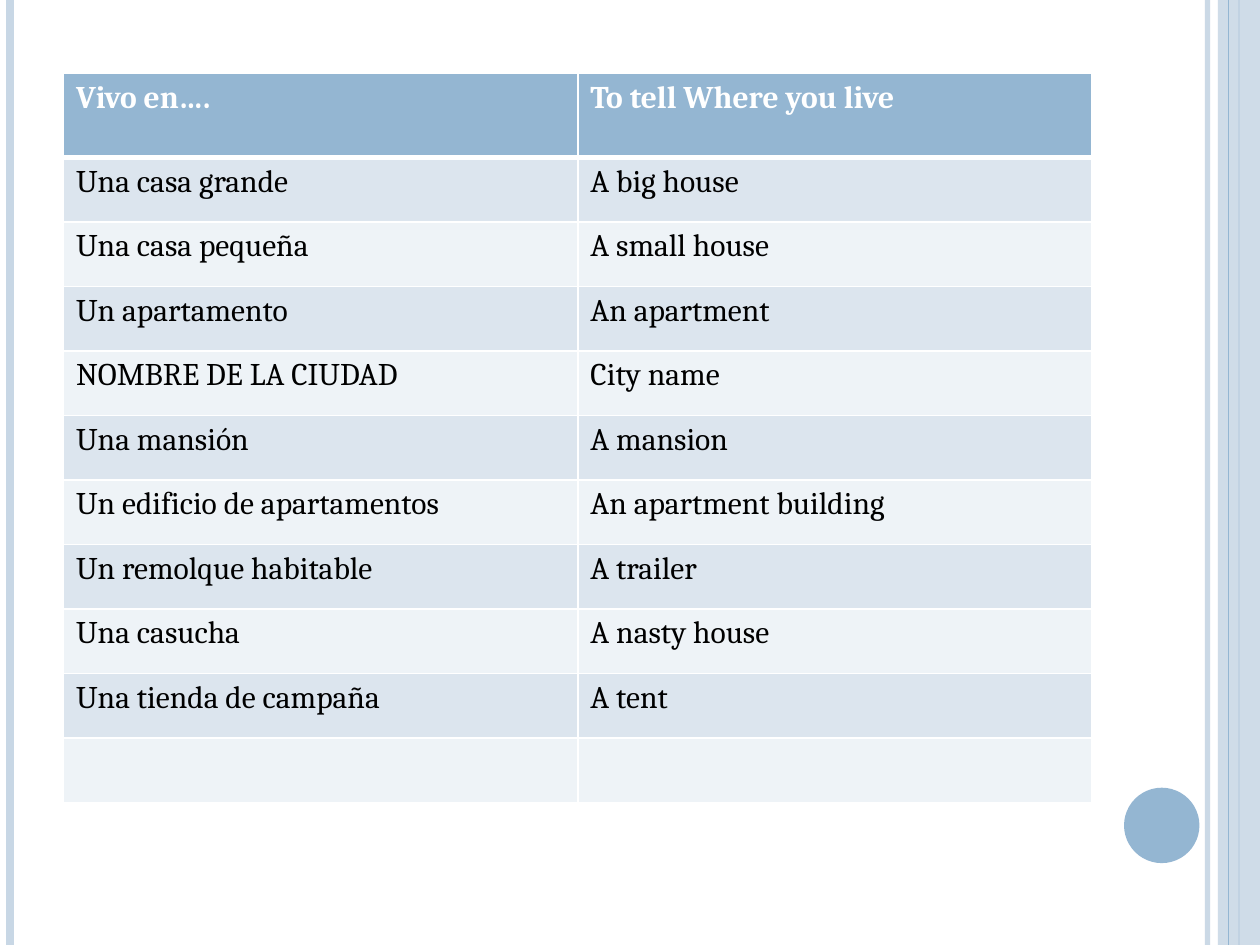
from lxml import etree
from pptx import Presentation
from pptx import util as u
from pptx.dml.color import RGBColor
from pptx.enum import shapes
from pptx.oxml import ns

COLOURS = {
    "accent": "94B6D2",
    "pale": "C8D7E5",
    "band_dark": "DCE5EE",
    "band_light": "EEF3F7",
    "white": "FFFFFF",
    "black": "000000",
}
WIDTH, HEIGHT = u.Cm(25.4), u.Cm(19.05)
HEADER_HEIGHT, ROW_HEIGHT = u.Cm(1.7), u.Cm(1.3)
COLUMN_WIDTH = u.Cm(10.37)

HOMES = [
    ("Vivo en….", "To tell Where you live"),
    ("Una casa grande", "A big house"),
    ("Una casa pequeña", "A small house"),
    ("Un apartamento", "An apartment"),
    ("NOMBRE DE LA CIUDAD", "City name"),
    ("Una mansión", "A mansion"),
    ("Un edificio de apartamentos", "An apartment building"),
    ("Un remolque habitable", "A trailer"),
    ("Una casucha", "A nasty house"),
    ("Una tienda de campaña", "A tent"),
    ("", ""),
]


def rgb(name):
    return RGBColor.from_string(COLOURS[name])


def set_opacity(element, percent):
    colour = next(element.iter(ns.qn("a:srgbClr")))
    etree.SubElement(colour, ns.qn("a:alpha"), val=str(percent * 1000))


def add_rule(slide, x, colour, points, opacity=100):
    """Draw a vertical line over the full height of the slide."""
    rule = slide.shapes.add_connector(
        shapes.MSO_CONNECTOR.STRAIGHT, u.Cm(x), 0, u.Cm(x), HEIGHT)
    rule.line.color.rgb = rgb(colour)
    rule.line.width = u.Pt(points)
    properties = rule._element.spPr
    if opacity < 100:
        set_opacity(properties, opacity)
    etree.SubElement(properties, ns.qn("a:effectLst"))


def add_filled_shape(slide, kind, box, colour, opacity=100):
    shape = slide.shapes.add_shape(kind, *box)
    shape.shadow.inherit = False
    shape.fill.solid()
    shape.fill.fore_color.rgb = rgb(colour)
    shape.line.fill.background()
    if opacity < 100:
        set_opacity(shape._element.spPr, opacity)


def set_borders(cell, widths):
    properties = cell._tc.get_or_add_tcPr()
    for index, (side, points) in enumerate(widths.items()):
        border = etree.Element(ns.qn(f"a:ln{side}"), w=str(u.Pt(points)))
        fill = etree.SubElement(border, ns.qn("a:solidFill"))
        etree.SubElement(fill, ns.qn("a:srgbClr"), val=COLOURS["white"])
        properties.insert(index, border)


def fill_cell(cell, content, fill, colour, bold, widths):
    cell.fill.solid()
    cell.fill.fore_color.rgb = rgb(fill)
    set_borders(cell, widths)
    if not content:
        return
    run = cell.text_frame.paragraphs[0].add_run()
    run.text = content
    run.font.color.rgb = rgb(colour)
    text_format = {"name": "Cambria", "size": u.Pt(18), "bold": bold}
    for attribute, value in text_format.items():
        setattr(run.font, attribute, value)


def add_homes_table(slide):
    table = slide.shapes.add_table(
        len(HOMES), 2, u.Cm(1.28), u.Cm(1.48), 2 * COLUMN_WIDTH,
        HEADER_HEIGHT + ROW_HEIGHT * (len(HOMES) - 1)).table
    for column in table.columns:
        column.width = COLUMN_WIDTH
    for index, phrases in enumerate(HOMES):
        header = index == 0
        table.rows[index].height = HEADER_HEIGHT if header else ROW_HEIGHT
        band = "band_dark" if index % 2 else "band_light"
        widths = {"L": 1, "R": 1, "T": 3 if index == 1 else 1,
                  "B": 3 if header else 1}
        for column, phrase in enumerate(phrases):
            fill_cell(table.cell(index, column), phrase,
                      "accent" if header else band,
                      "white" if header else "black", header, widths)


def main():
    presentation = Presentation()
    presentation.slide_width, presentation.slide_height = WIDTH, HEIGHT
    slide = presentation.slides.add_slide(presentation.slide_layouts[6])

    add_rule(slide, 24.34, "pale", 3, opacity=93)
    add_rule(slide, 0.21, "pale", 4.5)
    add_rule(slide, 24.98, "accent", 1.5)
    side_band = (u.Cm(24.55), 0, u.Cm(0.85), HEIGHT)
    add_filled_shape(slide, shapes.MSO_SHAPE.RECTANGLE, side_band, "pale", opacity=87)
    add_rule(slide, 24.77, "accent", 0.75)
    circle = (u.Cm(22.66), u.Cm(15.88), u.Cm(1.52), u.Cm(1.52))
    add_filled_shape(slide, shapes.MSO_SHAPE.OVAL, circle, "accent")
    add_homes_table(slide)

    presentation.save("out.pptx")


if __name__ == "__main__":
    main()
